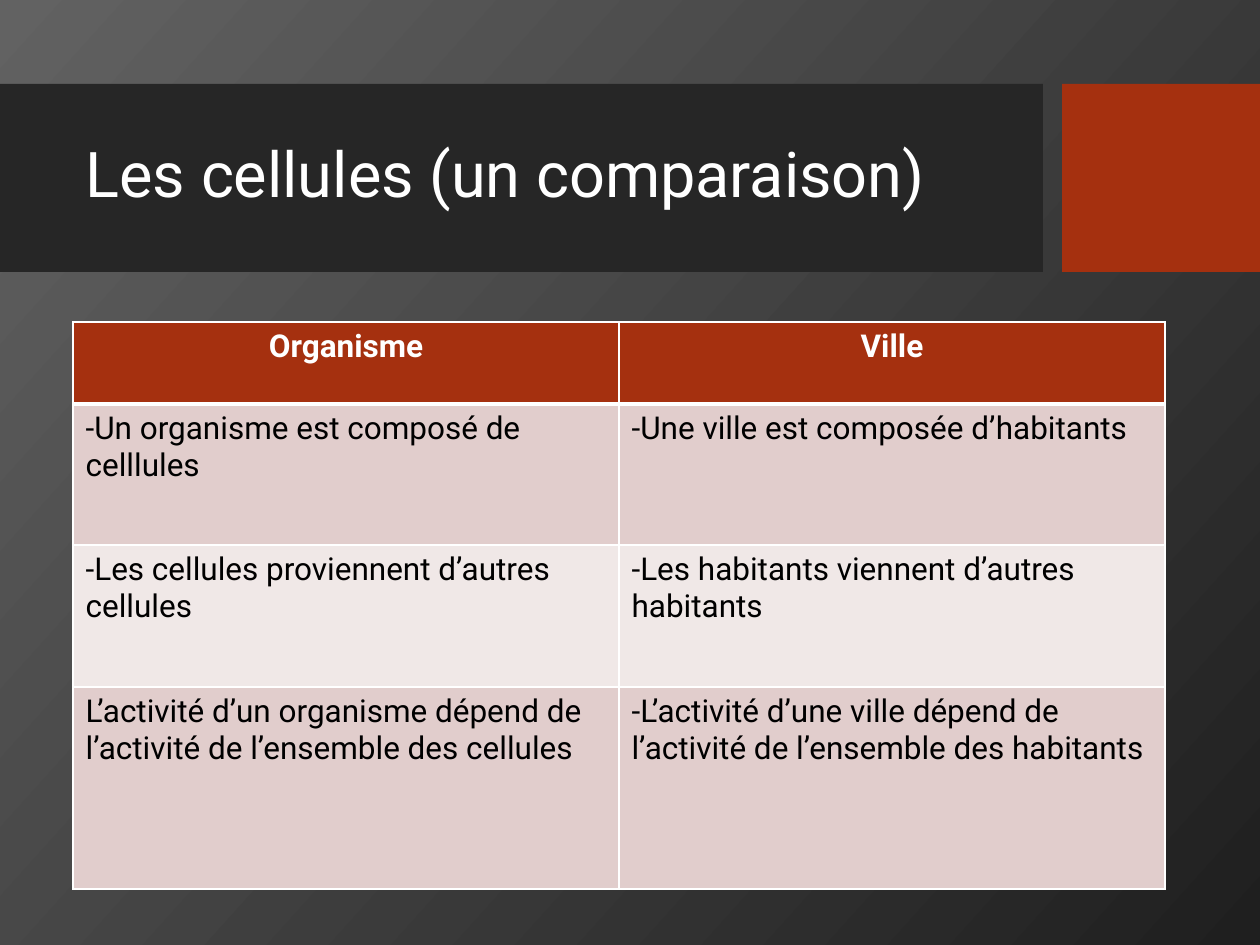
from dataclasses import dataclass

from lxml.etree import SubElement
from pptx import Presentation
from pptx.dml.color import RGBColor
from pptx.enum.shapes import MSO_SHAPE
from pptx.enum.text import MSO_ANCHOR, MSO_AUTO_SIZE, PP_ALIGN
from pptx.oxml.ns import qn
from pptx.util import Pt

EMU_PER_PX = 914400 // 126


def px(*lengths):
    return [round(length * 914400 / 126) for length in lengths]


@dataclass(frozen=True)
class Theme:
    font: str = "Roboto"
    white: str = "FFFFFF"
    black: str = "000000"
    band: str = "262626"
    accent: str = "A5300F"
    row_fills: tuple = ("E1CDCC", "F0E8E7")
    background: tuple = ("626262", "1F1F1F")
    background_angle: int = 318
    title_size: int = 36
    table_size: int = 18
    thin_line: int = 1
    header_line: int = 3


def apply_format(target, values):
    for name, value in values.items():
        setattr(target, name, value)


class SlideBuilder:
    def __init__(self, presentation, theme):
        self.theme = theme
        self.slide = presentation.slides.add_slide(presentation.slide_layouts[5])

    def background(self):
        fill = self.slide.background.fill
        fill.gradient()
        fill.gradient_angle = self.theme.background_angle
        for stop, color in zip(fill.gradient_stops, self.theme.background):
            stop.color.rgb = RGBColor.from_string(color)

    def font(self, paragraph, size, color, bold=False):
        apply_format(paragraph.font, {"name": self.theme.font, "size": Pt(size), "bold": bold})
        paragraph.font.color.rgb = RGBColor.from_string(color)

    def rectangle(self, box, color):
        shape = self.slide.shapes.add_shape(MSO_SHAPE.RECTANGLE, *px(*box))
        shape.shadow.inherit = False
        shape.fill.solid()
        shape.fill.fore_color.rgb = RGBColor.from_string(color)
        shape.line.fill.background()

    def title(self, box, text):
        shape = self.slide.shapes.title
        apply_format(shape, dict(zip(("left", "top", "width", "height"), px(*box))))
        apply_format(shape.text_frame, {
            "text": text,
            "word_wrap": True,
            "auto_size": MSO_AUTO_SIZE.NONE,
            "vertical_anchor": MSO_ANCHOR.MIDDLE,
        })
        paragraph = shape.text_frame.paragraphs[0]
        apply_format(paragraph, {"alignment": PP_ALIGN.LEFT, "line_spacing": 0.9})
        self.font(paragraph, self.theme.title_size, self.theme.white)
        tree = self.slide.shapes._spTree
        tree.append(shape._element)

    def borders(self, cell, widths):
        properties = cell._tc.get_or_add_tcPr()
        for side, width in widths.items():
            line = SubElement(properties, qn(f"a:ln{side}"), w=str(Pt(width)))
            solid = SubElement(line, qn("a:solidFill"))
            SubElement(solid, qn("a:srgbClr"), val=self.theme.white)

    def cell(self, cell, text, row):
        theme = self.theme
        header = row == 0
        widths = dict.fromkeys("LRTB", theme.thin_line)
        if header:
            widths["B"] = theme.header_line
        elif row == 1:
            widths["T"] = theme.header_line
        self.borders(cell, widths)
        cell.fill.solid()
        fill = theme.accent if header else theme.row_fills[(row - 1) % 2]
        cell.fill.fore_color.rgb = RGBColor.from_string(fill)
        cell.text = text
        paragraph = cell.text_frame.paragraphs[0]
        paragraph.alignment = PP_ALIGN.CENTER if header else PP_ALIGN.LEFT
        self.font(paragraph, theme.table_size, theme.white if header else theme.black, header)

    def table(self, left, top, column_width, row_heights, rows):
        columns = len(rows[0])
        box = px(left, top, column_width * columns, sum(row_heights))
        table = self.slide.shapes.add_table(len(rows), columns, *box).table
        for column in table.columns:
            column.width = px(column_width)[0]
        for row, (height, texts) in enumerate(zip(row_heights, rows)):
            table.rows[row].height = px(height)[0]
            for column, text in enumerate(texts):
                self.cell(table.cell(row, column), text, row)


def main():
    presentation = Presentation()
    presentation.slide_width, presentation.slide_height = px(1260, 945)
    theme = Theme()
    builder = SlideBuilder(presentation, theme)
    builder.background()
    builder.rectangle((0, 84, 1043, 188), theme.band)
    builder.rectangle((1062, 84, 198, 188), theme.accent)
    builder.title((73, 103, 950, 149), "Les cellules (un comparaison)")
    builder.table(73, 322, 546, (82, 141, 142, 202), [
        ("Organisme", "Ville"),
        ("-Un organisme est composé de celllules", "-Une ville est composée d’habitants"),
        ("-Les cellules proviennent d’autres cellules", "-Les habitants viennent d’autres habitants"),
        ("L’activité d’un organisme dépend de l’activité de l’ensemble des cellules",
         "-L’activité d’une ville dépend de l’activité de l’ensemble des habitants"),
    ])
    presentation.save("out.pptx")


if __name__ == "__main__":
    main()
